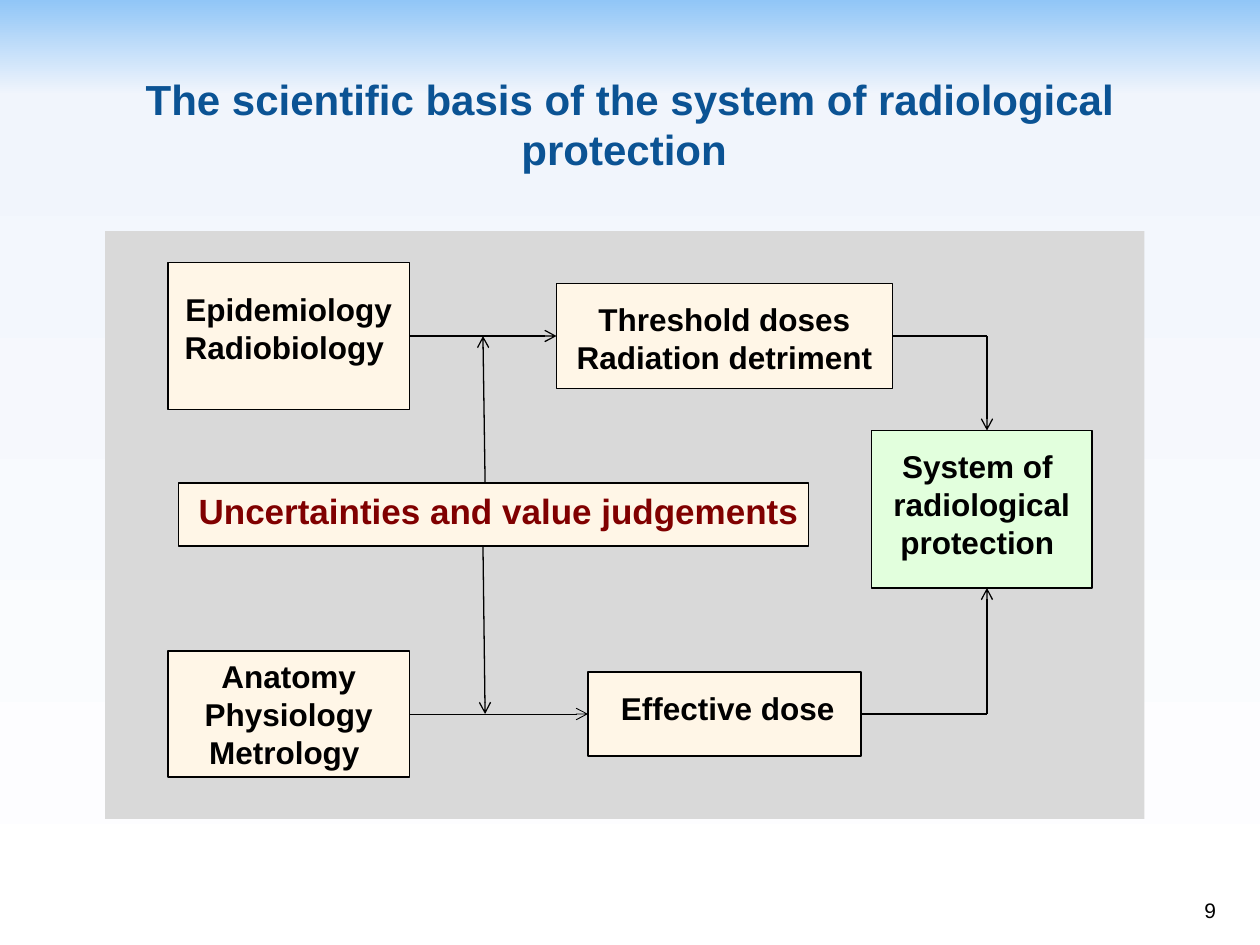
"""Build the slide on the scientific basis of radiological protection."""
from copy import deepcopy

from lxml import etree
from pptx import Presentation, util as u
from pptx.dml.color import RGBColor
from pptx.enum import shapes, text
from pptx.oxml.ns import qn

BLACK = RGBColor(0, 0, 0)
BLUE = RGBColor(0x0B, 0x53, 0x94)
RED = RGBColor(0x80, 0, 0)
GREY = RGBColor(0xD9, 0xD9, 0xD9)
CREAM = RGBColor(0xFF, 0xF6, 0xE7)
GREEN = RGBColor(0xE2, 0xFF, 0xDD)
SKY = [(0, RGBColor(0x91, 0xC6, 0xF7)), (0.1, RGBColor(0xF1, 0xF5, 0xFC)),
       (1, RGBColor(0xFF, 0xFF, 0xFF))]

COLS, ROWS = 120, 90
TITLE = "The scientific basis of the system of radiological protection "
PANEL = (10, 22, 99, 56)
BOXES = [
    ((17, 46, 60, 6), CREAM, (17, 46, 61, 5.3), RED, 20,
     ["Uncertainties and value judgements"]),
    ((53, 27, 32, 10), CREAM, (53, 28, 32, 8.5), BLACK, 18,
     ["Threshold doses", "Radiation detriment"]),
    ((56, 64, 26, 8), CREAM, (57, 65, 24.6, 4.8), BLACK, 18,
     ["Effective dose"]),
    ((83, 41, 21, 15), GREEN, (83, 42, 21, 12.1), BLACK, 18,
     ["System of ", "radiological", "protection "]),
    ((16, 62, 23, 12), CREAM, (17, 62, 21, 12.1), BLACK, 18,
     ["Anatomy", "Physiology", "Metrology "]),
    ((16, 25, 23, 14), CREAM, (16, 27, 23, 8.5), BLACK, 18,
     ["Epidemiology", "Radiobiology "]),
]
LINES = [
    ((39, 32), (53, 32), 0.75, True),
    ((39, 68), (56, 68), 0.5, True),
    ((46.2, 46), (46, 32), 0.75, True),
    ((46, 52), (46.2, 68), 0.75, True),
    ((85, 32), (94, 32), 0.75, False),
    ((94, 32), (94, 41), 0.75, True),
    ((82, 68), (94, 68), 0.75, False),
    ((94, 68), (94, 56), 0.75, True),
]

deck = Presentation()
deck.slide_width, deck.slide_height = u.Inches(10), u.Inches(7.5)
slide = deck.slides.add_slide(deck.slide_layouts[6])


def place(cells):
    steps = (deck.slide_width / COLS, deck.slide_height / ROWS) * 2
    return [round(n * step) for n, step in zip(cells, steps)]


def paint_sky():
    fill = slide.background.fill
    fill.gradient()
    fill.gradient_angle = 270
    stops = slide.element.find(".//" + qn("a:gsLst"))
    stops.append(deepcopy(stops[-1]))
    for stop, (pos, color) in zip(fill.gradient_stops, SKY):
        stop.position, stop.color.rgb = pos, color


def add_box(cells, color, edge=None):
    box = slide.shapes.add_shape(shapes.MSO_SHAPE.RECTANGLE, *place(cells))
    box.shadow.inherit = False
    box.fill.solid()
    box.fill.fore_color.rgb = color
    if edge is None:
        box.line.fill.background()
    else:
        box.line.color.rgb, box.line.width = edge, u.Pt(1)


def add_text(cells, lines, size, color, bold=True, align=text.PP_ALIGN.CENTER,
             anchor=text.MSO_ANCHOR.TOP):
    frame = slide.shapes.add_textbox(*place(cells)).text_frame
    frame.word_wrap, frame.vertical_anchor = True, anchor
    frame.text = "\n".join(lines)
    for para in frame.paragraphs:
        para.alignment = align
        font = para.font
        font.name, font.size, font.bold = "Arial", u.Pt(size), bold
        font.color.rgb = color
    return frame


def add_line(start, end, width, arrow):
    line = slide.shapes.add_connector(
        shapes.MSO_CONNECTOR.STRAIGHT, *place(start + end))
    line.line.color.rgb, line.line.width = BLACK, u.Pt(width)
    if arrow:
        etree.SubElement(line.line._get_or_add_ln(), qn("a:tailEnd"), type="arrow")
    etree.SubElement(line._element.spPr, qn("a:effectLst"))


paint_sky()
add_text((92, 82.5, 25, 6), ["9"], 12, BLACK, False,
         text.PP_ALIGN.RIGHT, text.MSO_ANCHOR.BOTTOM)
add_box(PANEL, GREY)
for cells, fill, area, color, size, lines in BOXES:
    add_box(cells, fill, BLACK)
    add_text(area, lines, size, color)
for item in LINES:
    add_line(*item)
head = add_text((6, 4, 108, 15), [TITLE], 24, BLUE, anchor=text.MSO_ANCHOR.MIDDLE)
head.margin_left = head.margin_right = head.margin_bottom = 0
deck.save("out.pptx")
